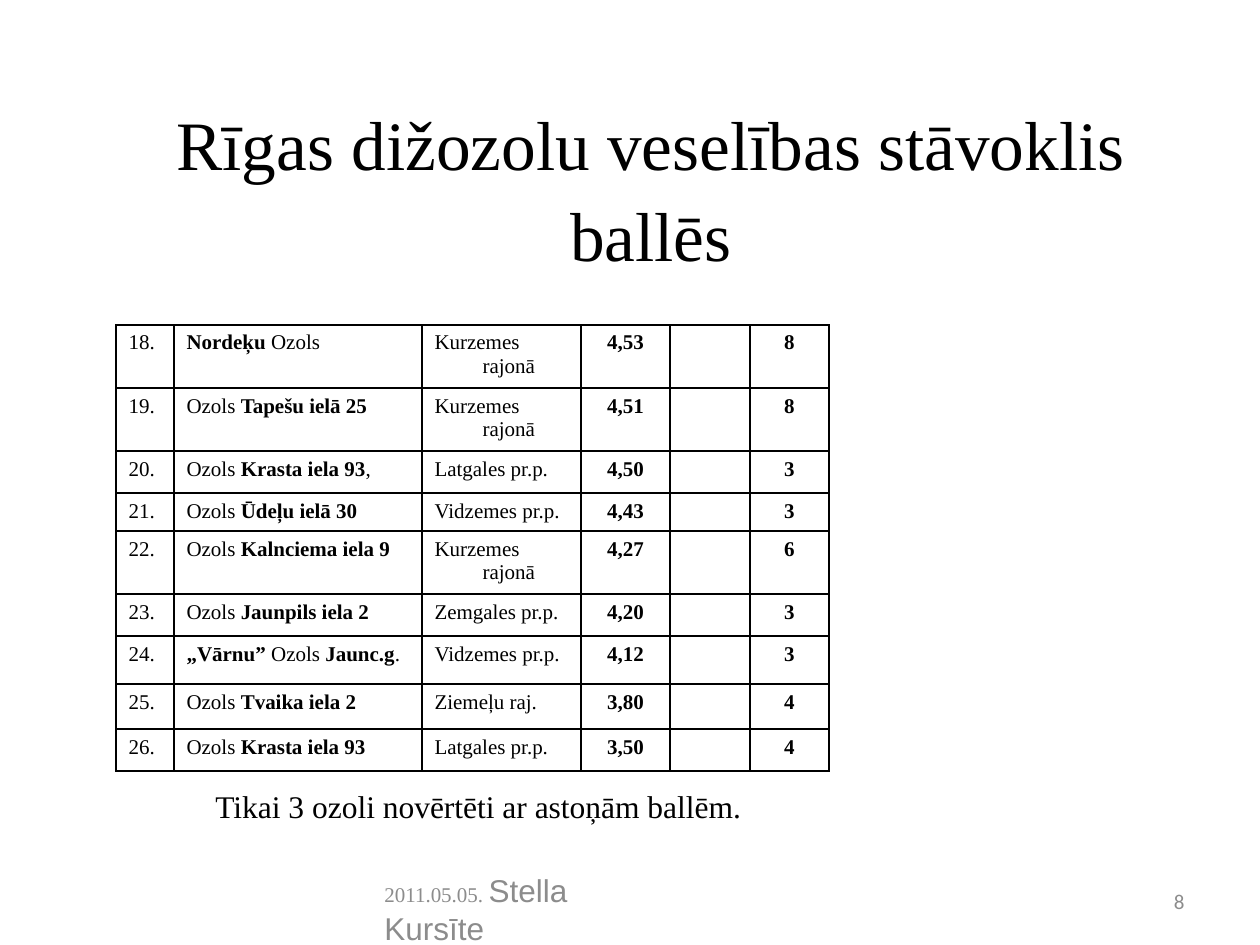
from lxml import etree
from pptx import Presentation
from pptx.dml.color import RGBColor
from pptx.enum.text import MSO_ANCHOR, PP_ALIGN
from pptx.oxml.ns import qn
from pptx.util import Pt

LEFT, CENTER, RIGHT = PP_ALIGN.LEFT, PP_ALIGN.CENTER, PP_ALIGN.RIGHT
MIDDLE = MSO_ANCHOR.MIDDLE
PX = 914400 // 126
SERIF = "Times New Roman"
COLORS = {"text": "000000", "muted": "8C8C8C", "border": "000000"}

# Content: asterisks enclose the bold part of a cell
TITLE = "Rīgas dižozolu veselības stāvoklis ballēs"
NOTE = "Tikai 3 ozoli novērtēti ar astoņām ballēm."
FOOTER_DATE, FOOTER_AUTHOR = "2011.05.05. ", "Stella Kursīte"
PAGE_NUMBER = "8"
FIRST_NUMBER = 18
OAKS = [  # name, district, girth, score
    ("*Nordeķu* Ozols", "Kurzemes rajonā", "4,53", "8"),
    ("Ozols *Tapešu ielā 25*", "Kurzemes rajonā", "4,51", "8"),
    ("Ozols *Krasta iela 93*,", "Latgales pr.p.", "4,50", "3"),
    ("Ozols *Ūdeļu ielā 30*", "Vidzemes pr.p.", "4,43", "3"),
    ("Ozols *Kalnciema iela 9*", "Kurzemes rajonā", "4,27", "6"),
    ("Ozols *Jaunpils iela 2*", "Zemgales pr.p.", "4,20", "3"),
    ("*„Vārnu” *Ozols *Jaunc.g*.", "Vidzemes pr.p.", "4,12", "3"),
    ("Ozols *Tvaika iela 2*", "Ziemeļu raj.", "3,80", "4"),
    ("Ozols *Krasta iela 93*", "Latgales pr.p.", "3,50", "4"),
]
COLUMN_WIDTHS = [58, 248, 159, 89, 80, 79]
ROW_HEIGHTS = [48, 44, 42, 38, 44, 42, 48, 45, 42]
HANGING_INDENT = 48


def px(*lengths):
    return [length * PX for length in lengths]


def style(font, size, color="text", name=SERIF):
    font.size, font.name = Pt(size), name
    font.color.rgb = RGBColor.from_string(COLORS[color])


def add_text(slide, box, text="", align=LEFT, wrap=True):
    frame = slide.shapes.add_textbox(*px(*box)).text_frame
    frame.word_wrap, frame.vertical_anchor = wrap, MIDDLE
    paragraph = frame.paragraphs[0]
    paragraph.alignment = align
    if text:
        paragraph.add_run().text = text
    return paragraph


def add_borders(cell):
    properties = cell._tc.get_or_add_tcPr()
    for side in ("lnL", "lnR", "lnT", "lnB"):
        line = etree.SubElement(properties, qn(f"a:{side}"), w=str(Pt(1)))
        fill = etree.SubElement(line, qn("a:solidFill"))
        etree.SubElement(fill, qn("a:srgbClr"), val=COLORS["border"])


def fill_cell(cell, marked_text, align):
    add_borders(cell)
    cell.fill.background()
    paragraph = cell.text_frame.paragraphs[0]
    paragraph.alignment = align
    style(paragraph.font, 12)
    indent = HANGING_INDENT * PX
    paragraph._p.get_or_add_pPr().set("marL", str(indent))
    paragraph._p.get_or_add_pPr().set("indent", str(-indent))
    for i, part in enumerate(marked_text.split("*")):
        if part:
            run = paragraph.add_run()
            run.text, run.font.bold = part, i % 2 == 1
    if not marked_text:
        etree.SubElement(paragraph._p, qn("a:endParaRPr"), sz="1200")


def main():
    deck = Presentation()
    deck.slide_width, deck.slide_height = px(1260, 945)
    slide = deck.slides.add_slide(deck.slide_layouts[6])

    # Footer and page number
    footer = add_text(slide, (372, 890, 294, 38))
    for text, size, name in ((FOOTER_DATE, 12, SERIF), (FOOTER_AUTHOR, 18, "Arial")):
        run = footer.add_run()
        run.text = text
        style(run.font, size, "muted", name)
    page = add_text(slide, (903, 876, 294, 50), PAGE_NUMBER, RIGHT)
    style(page.font, 12, "muted", "Calibri")

    # Title
    title = add_text(slide, (105, 105, 1092, 158), TITLE, CENTER)
    title.line_spacing = 1.1
    style(title.font, 39.6)

    # Table of oaks
    table = slide.shapes.add_table(
        len(OAKS), len(COLUMN_WIDTHS),
        *px(116, 325, sum(COLUMN_WIDTHS), sum(ROW_HEIGHTS))).table
    table.first_row = table.horz_banding = False
    for column, width in zip(table.columns, COLUMN_WIDTHS):
        column.width = width * PX
    for r, (name, district, girth, score) in enumerate(OAKS):
        table.rows[r].height = ROW_HEIGHTS[r] * PX
        values = (f"{FIRST_NUMBER + r}.", name, district, f"*{girth}*", "", f"*{score}*")
        for c, value in enumerate(values):
            fill_cell(table.cell(r, c), value, LEFT if c < 3 else CENTER)

    # Note below the table
    note = add_text(slide, (203, 780, 568, 51), NOTE, wrap=False)
    style(note.font, 18)

    deck.save("out.pptx")


if __name__ == "__main__":
    main()
